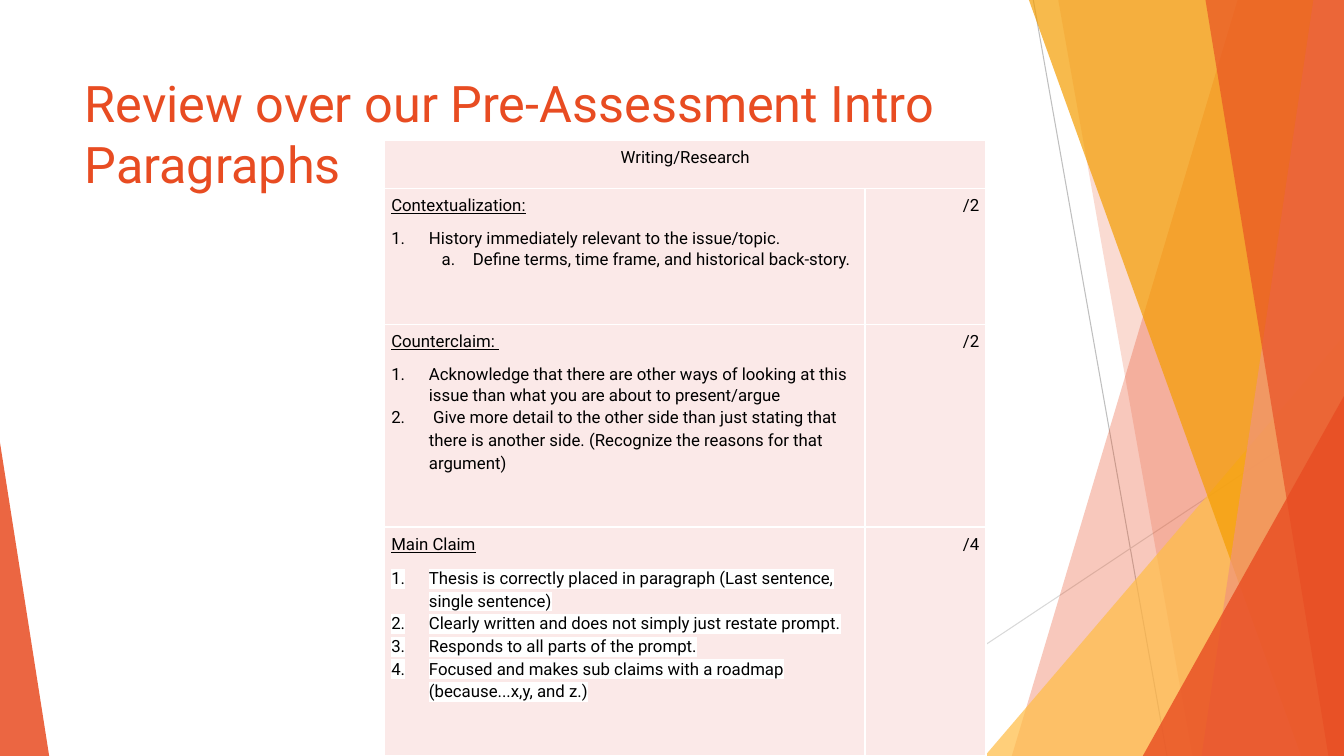
"""Build the slide that reviews the pre-assessment intro paragraphs with a rubric."""
from dataclasses import dataclass

from lxml.etree import SubElement
from pptx import Presentation
from pptx.dml.color import RGBColor
from pptx.enum.shapes import MSO_CONNECTOR as Connector, MSO_SHAPE as Preset
from pptx.enum.text import MSO_ANCHOR as Anchor, PP_ALIGN as Align
from pptx.oxml import parse_xml
from pptx.oxml.ns import nsdecls, qn
from pptx.util import Cm, Pt


@dataclass(frozen=True)
class Theme:
    font: str = "Roboto"
    title_size: int = 36
    body_size: int = 12
    orange: str = "E84C22"
    amber: str = "F49D00"
    yellow: str = "FFBD47"
    salmon: str = "F1947A"
    blush: str = "FBE9E8"
    white: str = "FFFFFF"
    black: str = "000000"
    gray: str = "BFBFBF"
    light_gray: str = "D9D9D9"


theme = Theme()
WIDTH, HEIGHT = 33.87, 19.05


def style_font(font, size, color):
    font.name = theme.font
    font.size = Pt(size)
    font.color.rgb = RGBColor.from_string(color)


def add_paragraph(frame, text, spacing, align=Align.LEFT, after=0, level=None):
    paragraph = frame.paragraphs[0]
    if paragraph.runs:
        paragraph = frame.add_paragraph()
    paragraph.alignment = align
    if level is not None:
        margin, hanging, scheme = LIST_LEVELS[level]
        paragraph.level = level
        properties = paragraph._p.get_or_add_pPr()
        properties.set("marL", str(Cm(margin)))
        properties.set("indent", str(-Cm(hanging)))
        SubElement(properties, qn("a:buAutoNum"), type=scheme)
    paragraph.line_spacing = spacing
    paragraph.space_after = Pt(after)
    style_font(paragraph.font, theme.body_size, theme.black)
    run = paragraph.add_run()
    run.text = text
    return run


presentation = Presentation()
presentation.slide_width, presentation.slide_height = Cm(WIDTH), Cm(HEIGHT)
slide = presentation.slides.add_slide(presentation.slide_layouts[5])
shapes = slide.shapes

title = shapes.title
title.left, title.top, title.width, title.height = Cm(1.88), Cm(1.7), Cm(23.88), Cm(3.66)
title.text_frame.text = "Review over our Pre-Assessment Intro Paragraphs"
title.text_frame.vertical_anchor = Anchor.TOP
title.text_frame.paragraphs[0].alignment = Align.LEFT
style_font(title.text_frame.paragraphs[0].font, theme.title_size, theme.orange)

for start_x, start_y, end_x, color in [
    (26.04, 0, 29.41, theme.gray),
    (WIDTH, 10.24, 20.62, theme.light_gray),
]:
    line = shapes.add_connector(Connector.STRAIGHT, Cm(start_x), Cm(start_y), Cm(end_x), Cm(HEIGHT))
    line.line.color.rgb = RGBColor.from_string(color)
    line.line.width = Pt(0.75)
    SubElement(line._element.spPr, qn("a:effectLst"))

# Bands give top and bottom x; triangles give left, top, width and apex position.
FACETS = [
    ((31.19, 25.5), theme.orange, 30),
    ((26.67, 30.05), theme.orange, 20),
    ((24.82, 8.46, 9.05, 1), theme.yellow, 72),
    ((25.93, 32.79), theme.amber, 70),
    ((33.1, 30.28), theme.salmon, 70),
    ((30.38, 33.48), theme.orange, 65),
    ((28.8, 9.98, 5.07, 1), theme.orange, 80),
    ((0, 11.15, 1.24, 0), theme.orange, 85),
]
for geometry, color, opacity in FACETS:
    if len(geometry) == 2:
        top_x, bottom_x = geometry
        builder = shapes.build_freeform(Cm(top_x), 0)
        corners = [(WIDTH, 0), (WIDTH, HEIGHT), (bottom_x, HEIGHT)]
        builder.add_line_segments([(Cm(x), Cm(y)) for x, y in corners], close=True)
        facet = builder.convert_to_shape()
    else:
        left, top, width, apex = geometry
        facet = shapes.add_shape(Preset.ISOSCELES_TRIANGLE, Cm(left), Cm(top), Cm(width), Cm(HEIGHT - top))
        facet.adjustments[0] = apex
    facet.shadow.inherit = False
    facet.line.fill.background()
    facet.fill.solid()
    facet.fill.fore_color.rgb = RGBColor.from_string(color)
    fill_color = facet._element.spPr.find(qn("a:solidFill")).find(qn("a:srgbClr"))
    SubElement(fill_color, qn("a:alpha"), val=str(opacity * 1000))

LIST_LEVELS = [(0.95, 0.95, "arabicPeriod"), (2.06, 0.79, "alphaLcPeriod")]
TIGHT, LOOSE = 1.07, 1.15
CRITERIA = [
    ("Contextualization:", "/2", False, [
        ("History immediately relevant to the issue/topic.", 0, TIGHT),
        ("Define terms, time frame, and historical back-story.", 1, TIGHT),
    ]),
    ("Counterclaim: ", "/2", False, [
        ("Acknowledge that there are other ways of looking at this issue than what "
         "you are about to present/argue", 0, TIGHT),
        (" Give more detail to the other side than just stating that there is another "
         "side. (Recognize the reasons for that argument)", 0, LOOSE),
    ]),
    ("Main Claim", "/4", True, [
        ("Thesis is correctly placed in paragraph (Last sentence, single sentence)", 0, LOOSE),
        ("Clearly written and does not simply just restate prompt.", 0, LOOSE),
        ("Responds to all parts of the prompt.", 0, LOOSE),
        ("Focused and makes sub claims with a roadmap (because...x,y, and z.)", 0, LOOSE),
    ]),
]
COLUMN_WIDTHS = [12.11, 3.05]
ROW_HEIGHTS = [1.21, 3.43, 5.11, 5.77]

rubric = shapes.add_table(len(ROW_HEIGHTS), len(COLUMN_WIDTHS), Cm(9.69), Cm(3.53),
                          Cm(sum(COLUMN_WIDTHS)), Cm(sum(ROW_HEIGHTS))).table
rubric.first_row = rubric.horz_banding = False
for column, width in zip(rubric.columns, COLUMN_WIDTHS):
    column.width = Cm(width)
for row, height in zip(rubric.rows, ROW_HEIGHTS):
    row.height = Cm(height)

for cell in rubric.iter_cells():
    cell.margin_left = cell.margin_right = cell.margin_top = cell.margin_bottom = Cm(0.17)
    cell.fill.solid()
    cell.fill.fore_color.rgb = RGBColor.from_string(theme.blush)
    for position, side in enumerate("LRTB"):
        border = parse_xml(
            f'<a:ln{side} {nsdecls("a")} w="{Pt(1)}"><a:solidFill>'
            f'<a:srgbClr val="{theme.white}"/></a:solidFill></a:ln{side}>')
        cell._tc.get_or_add_tcPr().insert(position, border)

rubric.cell(0, 0).merge(rubric.cell(0, 1))
add_paragraph(rubric.cell(0, 0).text_frame, "Writing/Research", TIGHT, Align.CENTER, after=8)
for row_index, (heading, points, highlighted, items) in enumerate(CRITERIA, start=1):
    criterion = rubric.cell(row_index, 0).text_frame
    add_paragraph(criterion, heading, TIGHT, after=8).font.underline = True
    for text, level, spacing in items:
        run = add_paragraph(criterion, text, spacing, level=level)
        if highlighted:
            highlight = SubElement(run._r.get_or_add_rPr(), qn("a:highlight"))
            SubElement(highlight, qn("a:srgbClr"), val=theme.white)
    add_paragraph(rubric.cell(row_index, 1).text_frame, points, TIGHT, Align.RIGHT, after=8)

presentation.save("out.pptx")
